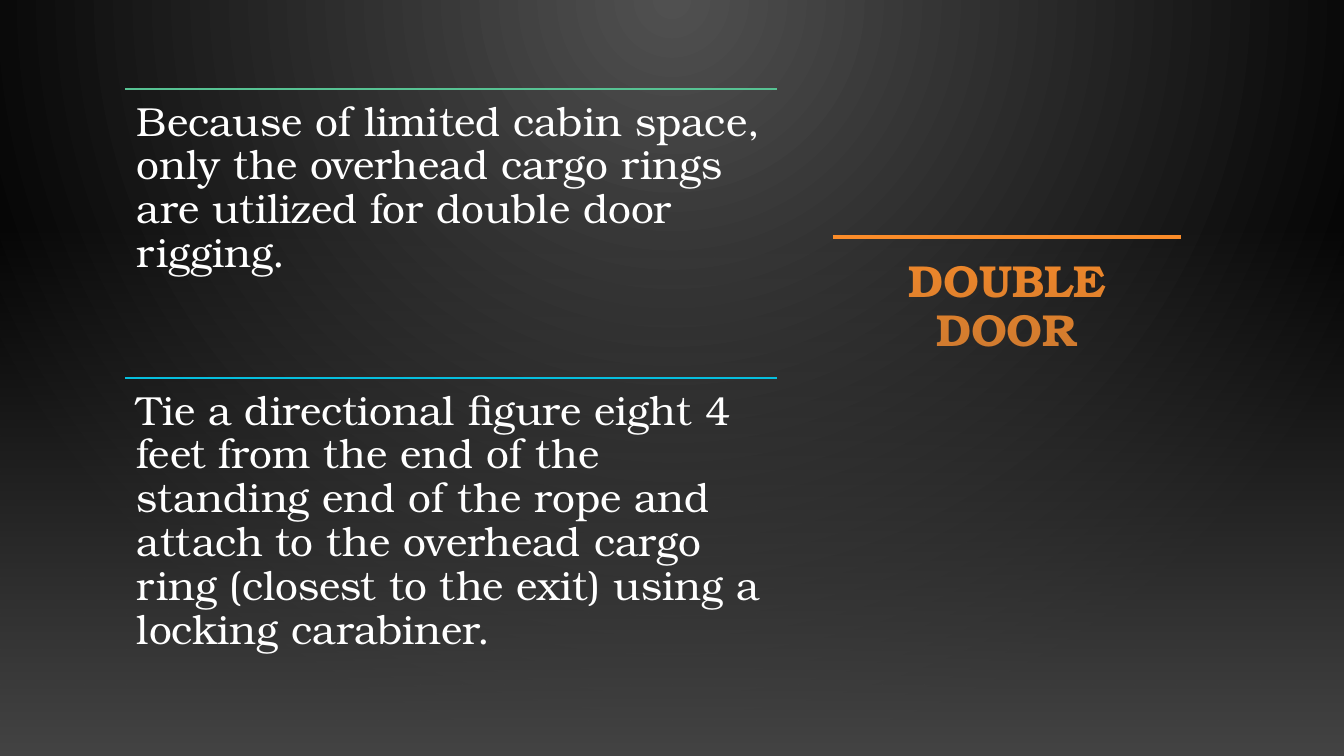
from collections import namedtuple
from dataclasses import dataclass

from pptx import Presentation
from pptx.dml.color import RGBColor as RGB
from pptx.enum.shapes import MSO_CONNECTOR as CONN, MSO_SHAPE as SHAPE
from pptx.enum.text import MSO_ANCHOR as ANCHOR, MSO_AUTO_SIZE as AUTO, PP_ALIGN as ALIGN
from pptx.oxml import parse_xml
from pptx.oxml.ns import nsdecls, qn
from pptx.oxml.xmlchemy import OxmlElement
from pptx.util import Pt

EMU_PER_PX = 914400 / 100.8
Box = namedtuple("Box", "x y w h")


@dataclass(frozen=True)
class Theme:
    font: str = "TeX Gyre Bonum"
    title_size: int = 32
    body_size: int = 29
    title_rule: float = 2.5
    body_rule: float = 1.25
    spacing: float = 0.9
    accent: str = "FB8C29"
    body: str = "FFFFFF"
    glow: str = "505050"
    edge: str = "000000"
    floor: str = "454545"


THEME = Theme()
SLIDE = Box(0, 0, 1344, 756)
STEPS = [
    ("57C293", "Because of limited cabin space, only the overhead cargo rings "
               "are utilized for double door rigging."),
    ("06BFDE", "Tie a directional figure eight 4 feet from the end of the standing "
               "end of the rope and attach to the overhead cargo ring (closest to "
               "the exit) using a locking carabiner."),
]


def px(n):
    return round(n * EMU_PER_PX)


def emu(box):
    return [px(n) for n in box]


def set_gradient(fill, owner, stops, direction):
    fill.gradient()
    old = next(owner.iter(qn("a:gradFill")))
    gs = "".join(
        f'<a:gs pos="{pos * 1000}"><a:srgbClr val="{color}">'
        f'<a:alpha val="{alpha * 1000}"/></a:srgbClr></a:gs>'
        for pos, color, alpha in stops)
    new = parse_xml(f'<a:gradFill {nsdecls("a")} rotWithShape="1">'
                    f'<a:gsLst>{gs}</a:gsLst>{direction}</a:gradFill>')
    old.getparent().replace(old, new)


def add_rule(slide, x, y, w, color, weight):
    line = slide.shapes.add_connector(CONN.STRAIGHT, px(x), px(y), px(x + w), px(y))
    line.line.color.rgb = RGB.from_string(color)
    line.line.width = Pt(weight)
    line._element.spPr.append(OxmlElement("a:effectLst"))


def write(tf, text, size, color, bold=False, align=ALIGN.LEFT):
    tf.word_wrap = True
    tf.auto_size = AUTO.NONE
    tf.vertical_anchor = ANCHOR.TOP
    p = tf.paragraphs[0]
    p.alignment = align
    p.line_spacing = THEME.spacing
    r = p.add_run()
    r.text = text
    r.font.name = THEME.font
    r.font.size = Pt(size)
    r.font.bold = bold
    r.font.color.rgb = RGB.from_string(color)


def add_backdrop(slide, box):
    set_gradient(slide.background.fill, slide._element,
                 [(0, THEME.glow, 100), (100, THEME.edge, 100)],
                 '<a:path path="circle">'
                 '<a:fillToRect l="43000" t="0" r="43000" b="100000"/></a:path>')
    top = 223
    floor = slide.shapes.add_shape(
        SHAPE.RECTANGLE, *emu(Box(box.x, box.y + top, box.w, box.h - top)))
    floor.shadow.inherit = False
    floor.line.fill.background()
    set_gradient(floor.fill, floor._element,
                 [(0, THEME.floor, 0), (100, THEME.floor, 100)],
                 '<a:lin ang="5400000" scaled="0"/>')


def add_title(slide, box, text):
    gap = 17
    title = slide.shapes.title
    title.left, title.top, title.width, title.height = emu(
        Box(box.x, box.y + gap, box.w, box.h - gap))
    write(title.text_frame, text, THEME.title_size, THEME.accent, True, ALIGN.CENTER)
    add_rule(slide, box.x, box.y, box.w, THEME.accent, THEME.title_rule)


def add_steps(slide, box, steps):
    height = box.h / len(steps)
    for i, (color, text) in enumerate(steps):
        y = box.y + i * height
        add_rule(slide, box.x, y, box.w, color, THEME.body_rule)
        tf = slide.shapes.add_textbox(*emu(Box(box.x, y, box.w, height))).text_frame
        tf.margin_left = tf.margin_top = tf.margin_right = tf.margin_bottom = px(12)
        write(tf, text, THEME.body_size, THEME.body)


def main():
    prs = Presentation()
    prs.slide_width, prs.slide_height = px(SLIDE.w), px(SLIDE.h)
    slide = prs.slides.add_slide(prs.slide_layouts[5])
    add_backdrop(slide, SLIDE)
    add_title(slide, Box(833, 237, 348, 430), "DOUBLE DOOR")
    add_steps(slide, Box(125, 89, 652, 578), STEPS)
    prs.save("out.pptx")


if __name__ == "__main__":
    main()
